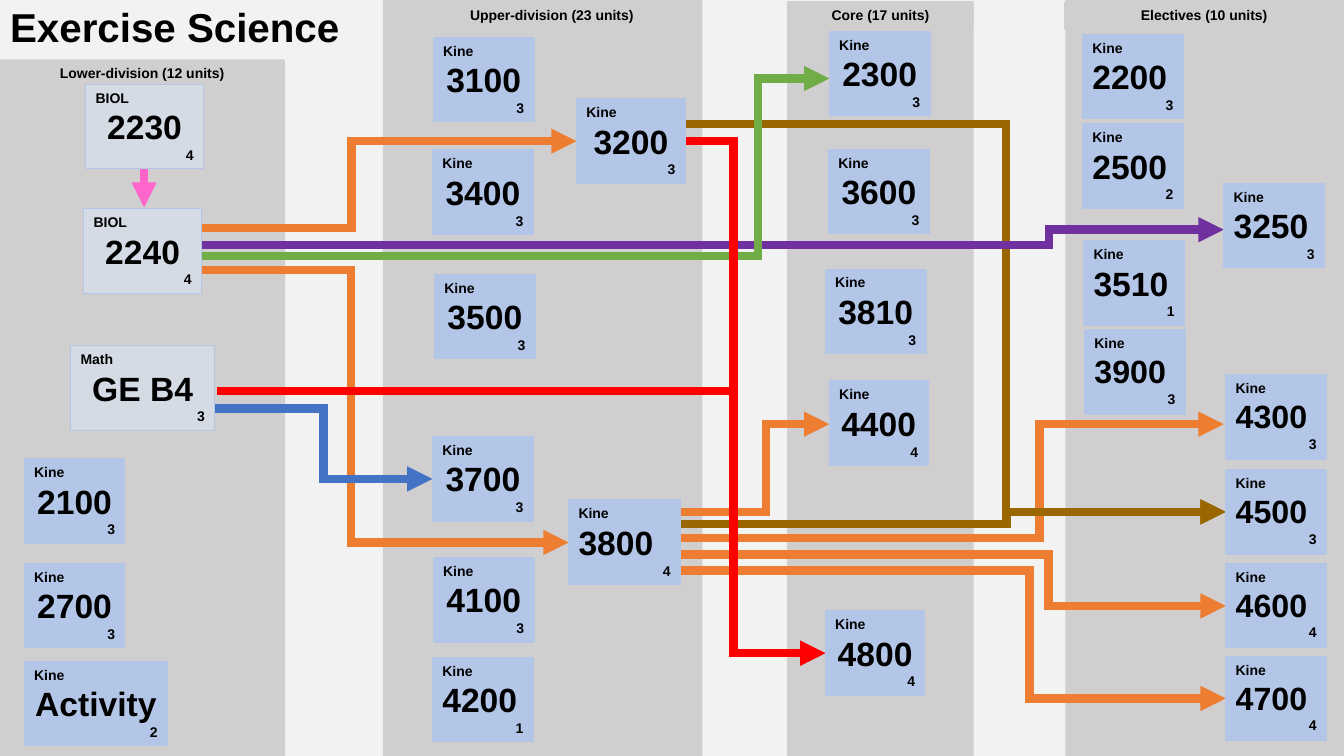
from pptx import Presentation
from pptx.dml.color import RGBColor
from pptx.enum.shapes import MSO_CONNECTOR, MSO_SHAPE
from pptx.enum.text import MSO_ANCHOR, MSO_AUTO_SIZE, PP_ALIGN
from pptx.oxml.ns import qn
from pptx.util import Cm, Pt
from lxml.etree import SubElement

LEFT, CENTER, RIGHT = PP_ALIGN.LEFT, PP_ALIGN.CENTER, PP_ALIGN.RIGHT
GREY, PALE, BLUE = "D0CECE", "D5DBE5", "B3C6E7"
ORANGE, BROWN, RED = "ED7D31", "996600", "FF0000"

PANELS = [
    (19.84, 0.03, 4.7),
    (0, 1.52, 7.19),
    (26.85, 0, 7.02),
    (9.65, 0, 8.05),
]
HEADINGS = [
    ("Lower-division (12 units)", 0, 1.5, 7.16),
    ("Upper-division (23 units)", 10.26, 0.03, 7.29),
    ("Core (17 units)", 19.84, 0.05, 4.7),
    ("Electives (10 units)", 26.82, 0.05, 7.05),
]
ROUTES = [
    (ORANGE, 4.9, 6.81, 8.85, 14.33, 13.67),
    ("4472C4", 5.41, 10.29, 8.15, 10.9, 12.07),
    (ORANGE, 17.04, 14.38, 25.95, 30.89, 17.6),
    (ORANGE, 17.02, 13.97, 26.42, 30.89, 15.27),
    (ORANGE, 16.97, 13.56, 26.19, 30.84, 10.69),
    (ORANGE, 5.05, 5.74, 8.86, 14.53, 3.56),
    (BROWN, 17.15, 3.12, 25.35, 30.89, 12.9),
    ("7030A0", 4.9, 6.17, 26.42, 30.84, 5.79),
    ("70AD47", 5.08, 6.45, 19.1, 20.9, 1.98),
    (ORANGE, 17.04, 12.9, 19.3, 20.9, 10.69),
    (BROWN, 17.09, 13.21, 25.37, 30.89, 12.9),
    (RED, 17.27, 3.56, 18.49, 20.8, 16.46),
    (RED, 5.46, 9.86, 18.47, 20.8, 16.46),
]
PREPARATION = [
    ("BIOL", "2230", 4, 2.16, 2.13, 2.97),
    ("BIOL", "2240", 4, 2.11, 5.26, 2.97),
    ("Math", "GE B4", 3, 1.78, 8.71, 3.63),
]
CENTERED = [
    ("2100", 3, 0.61, 11.56, 2.54),
    ("2700", 3, 0.61, 14.2, 2.54),
    ("Activity", 2, 0.61, 16.66, 3.61),
    ("3100", 3, 10.92, 0.94, 2.54),
    ("3400", 3, 10.9, 3.78, 2.54),
    ("3500", 3, 10.95, 6.91, 2.54),
    ("3700", 3, 10.9, 11, 2.54),
    ("4100", 3, 10.92, 14.05, 2.54),
    ("3200", 3, 14.53, 2.49, 2.74),
    ("2300", 3, 20.9, 0.79, 2.54),
    ("3600", 3, 20.88, 3.76, 2.54),
    ("3810", 3, 20.8, 6.78, 2.54),
    ("4400", 4, 20.9, 9.6, 2.49),
    ("4800", 4, 20.8, 15.39, 2.51),
]
LEFT_ALIGNED = [
    ("4200", 1, 10.9, 16.56, 2.54, 24),
    ("3800", 4, 14.33, 12.6, 2.82, 24),
    ("2200", 3, 27.28, 0.86, 2.54, 24),
    ("2500", 2, 27.28, 3.12, 2.54, 24),
    ("3510", 1, 27.31, 6.07, 2.54, 24),
    ("3900", 3, 27.33, 8.31, 2.54, 23),
    ("3250", 3, 30.84, 4.62, 2.54, 24),
    ("4300", 3, 30.89, 9.45, 2.54, 23),
    ("4500", 3, 30.89, 11.84, 2.54, 23),
    ("4600", 4, 30.89, 14.2, 2.54, 23),
    ("4700", 4, 30.89, 16.54, 2.54, 23),
]


def color(value):
    """Turn a hex string into a colour."""
    return RGBColor.from_string(value)


class Chart:
    """Draw the course map on one slide in one style."""

    def __init__(self, s, font="Arial", ink="000000"):
        """Keep the slide and the text style."""
        self.s, self.font, self.ink = s, font, ink

    def background(self, fill):
        """Fill the slide background."""
        self.s.background.fill.solid()
        self.s.background.fill.fore_color.rgb = color(fill)

    def add_text(self, p, text, size, align):
        """Add one bold run to a paragraph."""
        p.alignment = align
        r = p.add_run()
        r.text = text
        r.font.name, r.font.size, r.font.bold = self.font, Pt(size), True
        r.font.color.rgb = color(self.ink)

    def title(self, text):
        """Place and fill the title placeholder."""
        sp = self.s.shapes.title
        sp.left, sp.top, sp.width, sp.height = Cm(0), Cm(0), Cm(10.08), Cm(1.47)
        tf = sp.text_frame
        tf.auto_size = MSO_AUTO_SIZE.NONE
        tf.vertical_anchor = MSO_ANCHOR.MIDDLE
        tf.paragraphs[0].line_spacing = 0.9
        self.add_text(tf.paragraphs[0], text, 28.8, LEFT)

    def box(self, left, top, width, height, fill, lines=(), border=None):
        """Add a rectangle with lines of text, size and alignment."""
        sp = self.s.shapes.add_shape(MSO_SHAPE.RECTANGLE, Cm(left), Cm(top), Cm(width), Cm(height))
        sp.shadow.inherit = False
        sp.fill.solid()
        sp.fill.fore_color.rgb = color(fill)
        if border:
            sp.line.color.rgb = color(border)
            sp.line.width = Pt(0.75)
        else:
            sp.line.fill.background()
        tf = sp.text_frame
        tf.word_wrap = True
        tf.vertical_anchor = MSO_ANCHOR.TOP
        if lines:
            tf.auto_size = MSO_AUTO_SIZE.SHAPE_TO_FIT_TEXT
        for i, line in enumerate(lines):
            self.add_text(tf.add_paragraph() if i else tf.paragraphs[0], *line)

    def course(self, subject, number, units, left, top, width, size=24, align=CENTER, fill=BLUE):
        """Add a course card."""
        lines = [(subject, 10, LEFT), (number, size, align), (str(units), 10, RIGHT)]
        self.box(left, top, width, 2.13, fill, lines, BLUE)

    def arrow(self, stroke, x1, y1, x2, y2, bend=None):
        """Add a straight arrow, or an elbow that turns at bend."""
        kind = MSO_CONNECTOR.STRAIGHT if bend is None else MSO_CONNECTOR.ELBOW
        sp = self.s.shapes.add_connector(kind, Cm(x1), Cm(y1), Cm(x2), Cm(y2))
        sp.line.color.rgb = color(stroke)
        sp.line.width = Pt(6)
        pr = sp._element.spPr
        ln = pr.find(qn("a:ln"))
        SubElement(ln, qn("a:miter"), lim="800000")
        SubElement(ln, qn("a:tailEnd"), type="triangle")
        SubElement(pr, qn("a:effectLst"))
        if bend is not None:
            share = round((bend - x1) / (x2 - x1) * 100000)
            guides = pr.find(qn("a:prstGeom")).get_or_add_avLst()
            SubElement(guides, qn("a:gd"), name="adj1", fmla=f"val {share}")


def main():
    """Build and save the slide."""
    prs = Presentation()
    prs.slide_width, prs.slide_height = Cm(33.87), Cm(19.05)
    chart = Chart(prs.slides.add_slide(prs.slide_layouts[5]))
    chart.background("F2F2F2")
    chart.title("Exercise Science")
    for left, top, width in PANELS:
        chart.box(left, top, width, 19.05 - top, GREY)
    for text, left, top, width in HEADINGS:
        chart.box(left, top, width, 0.69, GREY, [(text, 10, CENTER)])
    chart.arrow("FF66CC", 3.63, 4.27, 3.63, 5.23)
    for stroke, x1, y1, bend, x2, y2 in ROUTES:
        chart.arrow(stroke, x1, y1, x2, y2, bend)
    for card in PREPARATION:
        chart.course(*card, fill=PALE)
    for card in CENTERED:
        chart.course("Kine", *card)
    for card in LEFT_ALIGNED:
        chart.course("Kine", *card, align=LEFT)
    prs.save("out.pptx")


if __name__ == "__main__":
    main()
